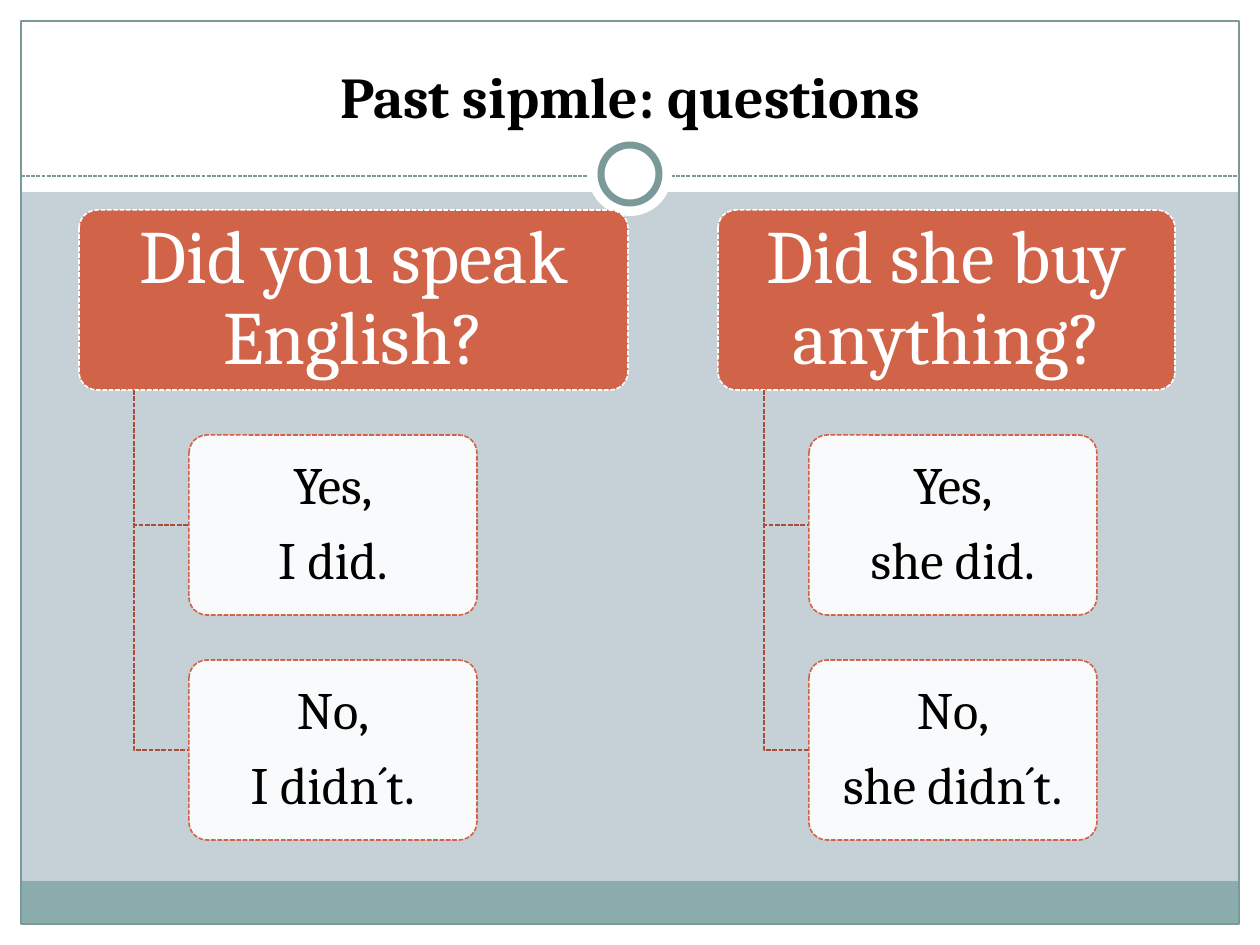
from dataclasses import dataclass

from lxml import etree
from pptx import Presentation
from pptx import util as u
from pptx.dml.color import RGBColor
from pptx.enum import dml, shapes, text
from pptx.oxml.ns import qn

SCALE = u.Inches(1) / 126  # EMU in one px
WIDTH, HEIGHT = 1260, 945


@dataclass(frozen=True)
class Theme:
    font: str = "Cambria"
    background: str = "C5D1D7"
    white: str = "FFFFFF"
    black: str = "000000"
    teal: str = "7C999A"
    footer: str = "8CADAE"
    accent: str = "D16349"
    branch: str = "A74F3A"
    title_size: int = 33
    question_size: int = 43
    answer_size: int = 30
    thin: float = 0.75
    outline: float = 0.9
    ring: int = 4


THEME = Theme()


def px(length):
    return u.Emu(round(length * SCALE))


def color(value):
    return RGBColor.from_string(value)


def style_line(line, value, width, dashed=False):
    line.color.rgb = color(value)
    line.width = u.Pt(width)
    if dashed:
        line.dash_style = dml.MSO_LINE.SQUARE_DOT


def add_box(page, kind, area, fill=None, opacity=100, line=None,
            width=THEME.thin, dashed=False):
    box = page.shapes.add_shape(kind, *map(px, area))
    box.shadow.inherit = False
    if fill:
        box.fill.solid()
        box.fill.fore_color.rgb = color(fill)
        if opacity < 100:
            solid = box.fill._xPr.find(qn("a:solidFill"))
            etree.SubElement(solid[0], qn("a:alpha"), val=str(opacity * 1000))
    else:
        box.fill.background()
    if line:
        style_line(box.line, line, width, dashed)
    else:
        box.line.fill.background()
    return box


def add_rule(page, start, end):
    rule = page.shapes.add_connector(
        shapes.MSO_CONNECTOR.STRAIGHT, *map(px, start + end))
    style_line(rule.line, THEME.teal, THEME.thin, dashed=True)
    etree.SubElement(rule._element.spPr, qn("a:effectLst"))


def add_elbow(page, x, top, bottom, right):
    builder = page.shapes.build_freeform(x, top, scale=SCALE)
    builder.add_line_segments([(x, bottom), (right, bottom)], close=False)
    elbow = builder.convert_to_shape()
    elbow.shadow.inherit = False
    elbow.fill.background()
    style_line(elbow.line, THEME.branch, THEME.outline, dashed=True)


def write(box, lines, size, value, bold=False, spacing=1.0, after=0.0,
          anchor=text.MSO_ANCHOR.MIDDLE, margins=(12, 6)):
    frame = box.text_frame
    frame.word_wrap = True
    frame.vertical_anchor = anchor
    frame.margin_left = frame.margin_right = px(margins[0])
    frame.margin_top = frame.margin_bottom = px(margins[1])
    for index, line in enumerate(lines):
        para = frame.add_paragraph() if index else frame.paragraphs[0]
        para.alignment = text.PP_ALIGN.CENTER
        para.line_spacing = spacing
        para.space_after = u.Pt(size * after)
        span = para.add_run()
        span.text = line
        span.font.name = THEME.font
        span.font.size = u.Pt(size)
        span.font.bold = bold
        span.font.color.rgb = color(value)


def add_card(page, area, lines, size, value, margins, **look):
    card = add_box(page, shapes.MSO_SHAPE.ROUNDED_RECTANGLE, area,
                   width=THEME.outline, dashed=True, **look)
    card.adjustments[0] = 0.1
    write(card, lines, size, value, spacing=0.9, after=0.35, margins=margins)


def add_backdrop(page):
    rectangle, oval = shapes.MSO_SHAPE.RECTANGLE, shapes.MSO_SHAPE.OVAL
    edge = 21
    # White margins and header
    for area in ((0, HEIGHT - edge, WIDTH, edge), (0, 0, WIDTH, 192),
                 (0, 0, edge, HEIGHT), (WIDTH - edge, 0, edge, HEIGHT)):
        add_box(page, rectangle, area, THEME.white)
    # Footer band, frame and dashed rule
    add_box(page, rectangle, (edge, 881, WIDTH - 2 * edge, 43), THEME.footer)
    add_box(page, rectangle,
            (edge, edge, WIDTH - 2 * edge, HEIGHT - 2 * edge), line=THEME.teal)
    add_rule(page, (edge, 176), (WIDTH - edge, 176))
    # Ring on the rule
    add_box(page, oval, (588, 132, 84, 84), THEME.white)
    add_box(page, oval, (601, 145, 58, 58), THEME.white,
            line=THEME.teal, width=THEME.ring)


def add_tree(page, left, width, question, answers):
    top, height, pitch = 210, 180, 225
    add_card(page, (left, top, width, height), [question],
             THEME.question_size, THEME.white, (6, 0),
             fill=THEME.accent, line=THEME.white)
    # Answers hang from a trunk at a tenth of the question's width
    trunk, answer_left = left + round(width / 10), left + round(width / 5)
    for row, lines in enumerate(answers, start=1):
        answer_top = top + row * pitch
        add_elbow(page, trunk, top + height, answer_top + height // 2,
                  answer_left)
        add_card(page, (answer_left, answer_top, 288, height), lines,
                 THEME.answer_size, THEME.black, (3, 0),
                 fill=THEME.white, opacity=90, line=THEME.accent)


def main():
    deck = Presentation()
    deck.slide_width, deck.slide_height = px(WIDTH), px(HEIGHT)
    page = deck.slides.add_slide(deck.slide_layouts[6])
    page.background.fill.solid()
    page.background.fill.fore_color.rgb = color(THEME.background)

    add_backdrop(page)

    # Title
    title = page.shapes.add_textbox(*map(px, (42, 32, 1176, 104)))
    write(title, ["Past sipmle: questions"], THEME.title_size, THEME.black,
          bold=True, anchor=text.MSO_ANCHOR.BOTTOM)

    # Question trees
    add_tree(page, 79, 549, "Did you speak English?",
             [("Yes,", "I did."), ("No,", "I didn´t.")])
    add_tree(page, 718, 457, "Did she buy anything?",
             [("Yes,", "she did."), ("No,", "she didn´t.")])

    deck.save("out.pptx")


if __name__ == "__main__":
    main()
